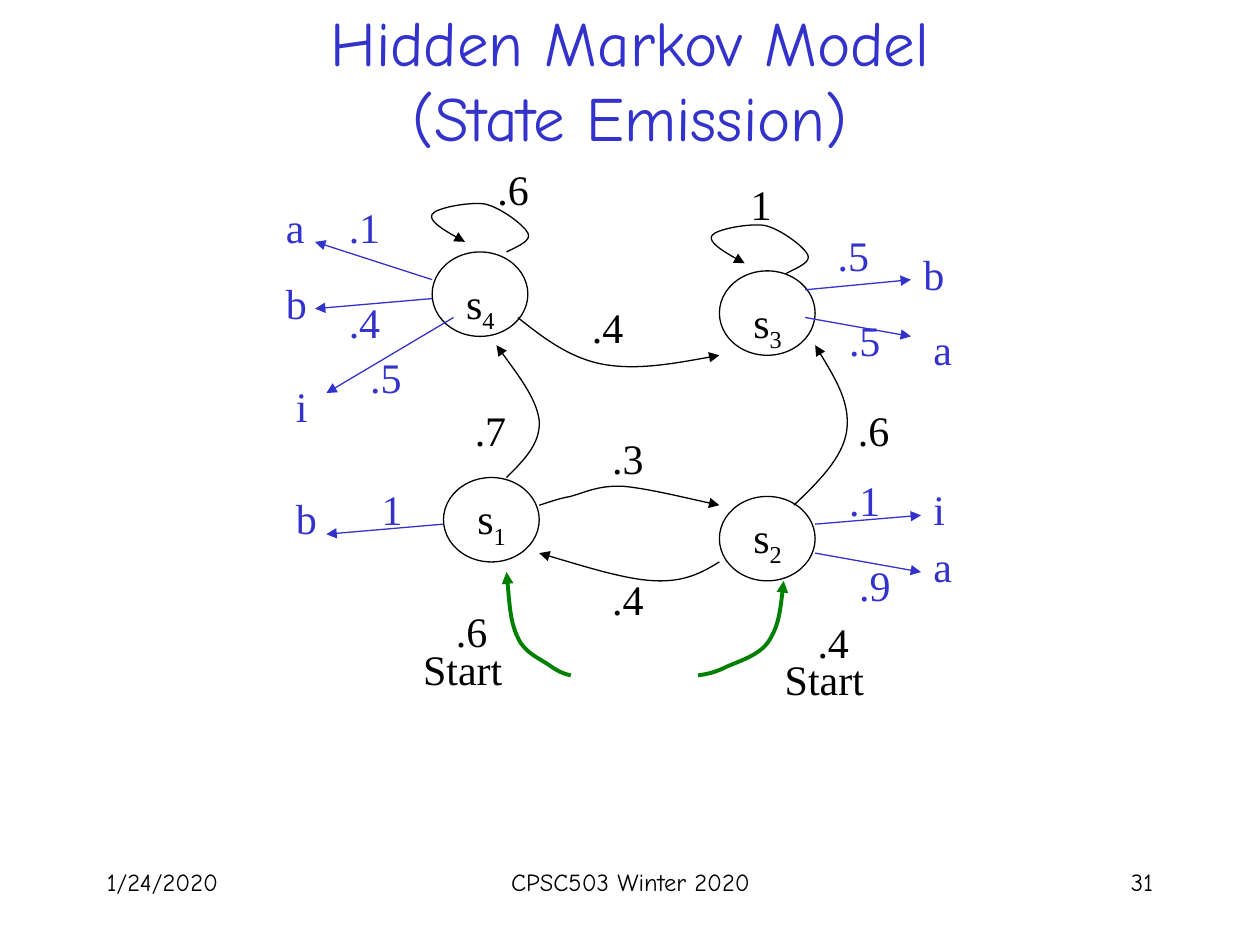
from lxml import etree
from pptx import Presentation
from pptx.dml.color import RGBColor
from pptx.enum.shapes import MSO_CONNECTOR, MSO_SHAPE
from pptx.enum.text import MSO_ANCHOR, MSO_AUTO_SIZE, PP_ALIGN
from pptx.oxml.ns import qn
from pptx.util import Inches, Pt

LEFT, CENTER, RIGHT = PP_ALIGN.LEFT, PP_ALIGN.CENTER, PP_ALIGN.RIGHT
MIDDLE = MSO_ANCHOR.MIDDLE
FIT_SHAPE = MSO_AUTO_SIZE.SHAPE_TO_FIT_TEXT
STRAIGHT = MSO_CONNECTOR.STRAIGHT
OVAL = MSO_SHAPE.OVAL
BLACK, BLUE, GREEN = "000000", "3333CC", "008000"
HEADING_FONT, DIAGRAM_FONT = "Comic Neue", "Times New Roman"

presentation = Presentation()
presentation.slide_width = Inches(10)
presentation.slide_height = Inches(7.5)
slide = presentation.slides.add_slide(presentation.slide_layouts[6])
shapes = slide.shapes


def add_text(text, left, top, width, height, size, font, color, align=LEFT):
    box = shapes.add_textbox(Inches(left), Inches(top), Inches(width), Inches(height))
    box.text_frame.word_wrap = True
    paragraph = box.text_frame.paragraphs[0]
    paragraph.text = text
    paragraph.alignment = align
    paragraph.font.size = Pt(size)
    paragraph.font.name = font
    paragraph.font.color.rgb = RGBColor.from_string(color)
    return box.text_frame


def style_arrow(shape, color, width):
    shape.line.color.rgb = RGBColor.from_string(color)
    shape.line.width = Pt(width)
    line = shape.line._get_or_add_ln()
    etree.SubElement(line, qn("a:tailEnd"), type="triangle")
    etree.SubElement(shape.element.spPr, qn("a:effectLst"))


footers = [
    ("1/24/2020", 0.75, 2.08, LEFT),
    ("CPSC503 Winter 2020", 3.42, 3.17, CENTER),
    ("31", 7.17, 2.08, RIGHT),
]
for text, left, width, align in footers:
    add_text(text, left, 6.83, width, 0.5, 14, HEADING_FONT, BLACK, align)

title = add_text("Hidden Markov Model", 0.75, 0, 8.5, 1.25, 36, HEADING_FONT, BLUE, CENTER)
title.vertical_anchor = MIDDLE
title.paragraphs[0].add_line_break()
title.paragraphs[0].add_run().text = "(State Emission)"

states = [("4", 3.43, 2, 0.15), ("3", 5.71, 2.15, 0.15), ("1", 3.52, 3.79, 0.07), ("2", 5.71, 3.94, 0.07)]
for number, left, top, label_drop in states:
    state = shapes.add_shape(OVAL, Inches(left), Inches(top), Inches(0.76), Inches(0.67))
    state.shadow.inherit = False
    state.fill.background()
    state.line.color.rgb = RGBColor.from_string(BLACK)
    state.line.width = Pt(0.75)
    label = add_text("s", left + 0.17, top + label_drop, 0.45, 0.45, 24, DIAGRAM_FONT, BLACK)
    label.word_wrap = False
    label.auto_size = FIT_SHAPE
    subscript = label.paragraphs[0].add_run()
    subscript.text = number
    subscript.font._element.set("baseline", "-25000")

transitions = [
    [(4.02, 3.79), (4.16, 3.65), (4.29, 3.52), (4.28, 3.34), (4.26, 3.17), (4.1, 2.96), (3.94, 2.74)],
    [(4.11, 2.52), (4.31, 2.68), (4.52, 2.84), (4.78, 2.89), (5.05, 2.94), (5.38, 2.88), (5.71, 2.82)],
    [(6.3, 4.01), (6.5, 3.82), (6.69, 3.63), (6.72, 3.42), (6.75, 3.2), (6.61, 2.97), (6.47, 2.74)],
    [(4.28, 4.01), (4.35, 3.99), (4.42, 3.96), (4.53, 3.94), (4.64, 3.91), (4.75, 3.85), (4.95, 3.86),
     (5.15, 3.88), (5.43, 3.95), (5.71, 4.01)],
    [(5.71, 4.46), (5.58, 4.54), (5.44, 4.62), (5.2, 4.61), (4.97, 4.6), (4.62, 4.49), (4.28, 4.39)],
]
loop = [(0.59, 0), (0.69, -0.05), (0.79, -0.09), (0.76, -0.15), (0.73, -0.21), (0.55, -0.35), (0.42, -0.38),
        (0.3, -0.4), (0.03, -0.35), (0, -0.3), (-0.03, -0.25), (0.11, -0.16), (0.26, -0.08)]
for left, top in [(3.43, 2), (5.65, 2.17)]:
    transitions.append([(left + x, top + y) for x, y in loop])
starts = [
    [(4.53, 5.36), (4.48, 5.35), (4.43, 5.33), (4.36, 5.28), (4.29, 5.23), (4.16, 5.18), (4.11, 5.06),
     (4.05, 4.94), (4.04, 4.74), (4.02, 4.54)],
    [(5.54, 5.36), (5.61, 5.35), (5.67, 5.34), (5.77, 5.29), (5.86, 5.25), (6.03, 5.2), (6.1, 5.09),
     (6.18, 4.97), (6.2, 4.79), (6.22, 4.61)],
]
for curves, color, width in [(transitions, BLACK, 0.75), (starts, GREEN, 2.25)]:
    for curve in curves:
        points = [(Inches(x), Inches(y)) for x, y in curve]
        builder = shapes.build_freeform(*points[0])
        builder.add_line_segments(points[1:], close=False)
        arrow = builder.convert_to_shape()
        arrow.fill.background()
        outline = next(arrow.element.iter(qn("a:path")))
        segments = outline.findall(qn("a:lnTo"))
        for first in range(0, len(segments), 3):
            bezier = etree.SubElement(outline, qn("a:cubicBezTo"))
            for segment in segments[first:first + 3]:
                bezier.append(segment[0])
                outline.remove(segment)
        style_arrow(arrow, color, width)

emissions = [
    (6.47, 4.16, 7.31, 4.09), (6.47, 4.39, 7.31, 4.54),
    (6.39, 2.3, 7.23, 2.22), (6.39, 2.52, 7.23, 2.67),
    (3.43, 2.22, 2.5, 1.92), (3.43, 2.37, 2.5, 2.45),
    (3.6, 2.52, 2.59, 3.12), (3.52, 4.16, 2.59, 4.24),
]
for emission in emissions:
    connector = shapes.add_connector(STRAIGHT, *[Inches(value) for value in emission])
    style_arrow(connector, BLUE, 0.75)

transition_labels = [
    (".7", 3.67, 3.16), (".3", 4.76, 3.38), (".4", 4.6, 2.34), (".6", 3.85, 1.25), ("1", 5.86, 1.37),
    (".6", 6.71, 3.16), (".4", 4.76, 4.5), (".6", 3.52, 4.76), (".4", 6.39, 4.84),
    ("Start", 3.26, 5.06), ("Start", 6.13, 5.14),
]
emission_labels = [
    ("a", 2.17, 1.55), ("b", 2.17, 2.15), ("i", 2.25, 2.97), ("b", 2.25, 3.86),
    ("b", 7.23, 1.92), ("a", 7.31, 2.52), ("i", 7.31, 3.79), ("a", 7.31, 4.24),
    (".5", 6.55, 1.77), (".5", 6.64, 2.45), (".1", 6.64, 3.72), (".9", 6.72, 4.39),
    ("1", 2.93, 3.79), (".1", 2.67, 1.55), (".4", 2.67, 2.3), (".5", 2.84, 2.74),
]
label_widths = {"a": 0.35, "b": 0.37, "i": 0.3, "1": 0.37, "Start": 0.84}
for labels, color in [(transition_labels, BLACK), (emission_labels, BLUE)]:
    for text, left, top in labels:
        width = label_widths.get(text, 0.46)
        label = add_text(text, left, top, width, 0.45, 24, DIAGRAM_FONT, color)
        label.word_wrap = text == "Start"
        label.auto_size = FIT_SHAPE

presentation.save("out.pptx")
